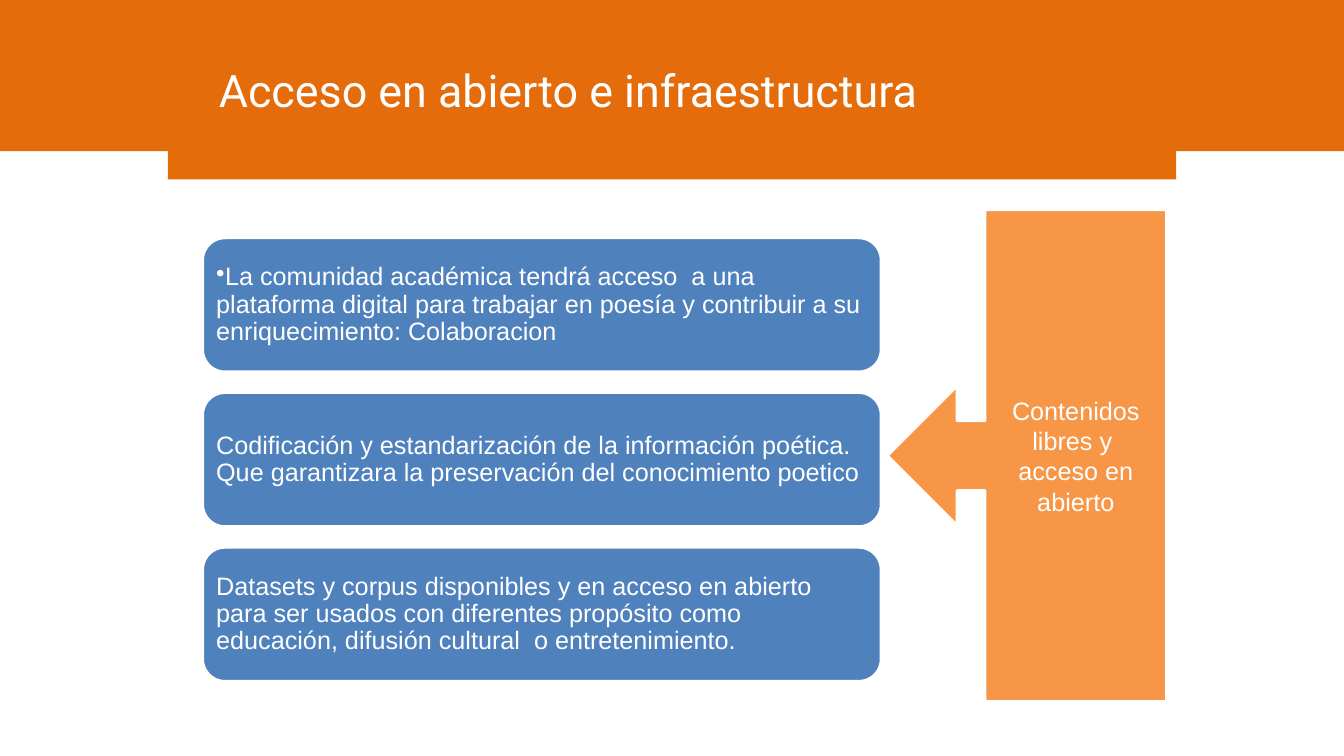
from pptx import Presentation
from pptx.dml.color import RGBColor
from pptx.enum.shapes import MSO_SHAPE
from pptx.enum.text import MSO_ANCHOR, PP_ALIGN
from pptx.oxml.ns import qn
from pptx.util import Inches, Pt
from lxml import etree

ORANGE, PEACH, BLUE, WHITE = "E46C0A", "F79646", "4F81BD", "FFFFFF"
WIDTH, HEIGHT = 13.33, 7.5

GOALS = [
    "La comunidad académica tendrá acceso  a una plataforma digital para "
    "trabajar en poesía y contribuir a su enriquecimiento: Colaboracion",
    "Codificación y estandarización de la información poética. "
    "Que garantizara la preservación del conocimiento poetico",
    "Datasets y corpus disponibles y en acceso en abierto para ser usados con "
    "diferentes propósito como educación, difusión cultural  o entretenimiento.",
]


def color(value):
    return RGBColor.from_string(value)


def add_block(slide, kind, box, fill, line=None):
    block = slide.shapes.add_shape(kind, *map(Inches, box))
    block.shadow.inherit = False
    block.fill.solid()
    block.fill.fore_color.rgb = color(fill)
    if line:
        block.line.color.rgb = color(line)
        block.line.width = Pt(2)
    else:
        block.line.fill.background()
    return block


def set_text(shape, text, font, size, align, spacing, inset):
    frame = shape.text_frame
    frame.text = text
    frame.word_wrap = True
    frame.vertical_anchor = MSO_ANCHOR.MIDDLE
    frame.margin_left = frame.margin_right = Inches(inset)
    frame.margin_top = frame.margin_bottom = Inches(inset)
    para = frame.paragraphs[0]
    para.alignment = align
    para.line_spacing = spacing
    run = para.runs[0].font
    run.name, run.size = font, Pt(size)
    run.color.rgb = color(WHITE)
    return para


def add_bullet(para):
    props = para._p.get_or_add_pPr()
    props.set("marL", "0")
    props.set("indent", "0")
    etree.SubElement(props, qn("a:buChar")).set("char", "•")


def add_header(slide, left, top, width, height):
    """Draw the full-width band, its lower tab and the title over both."""
    add_block(slide, MSO_SHAPE.RECTANGLE, (left, top, width, height), ORANGE)
    tab = 10
    add_block(slide, MSO_SHAPE.RECTANGLE,
              (left + (width - tab) / 2, top, tab, height + 0.28), ORANGE)
    title = slide.shapes.title
    title.left, title.top = Inches(left + 2.17), Inches(top + 0.3)
    title.width, title.height = Inches(8.08), Inches(1.25)
    set_text(title, "Acceso en abierto e infraestructura", "Roboto", 32,
             PP_ALIGN.LEFT, 0.9, 0)
    title.element.getparent().append(title.element)


def add_goals(slide, left, top, width, height):
    """Stack the goals evenly; only the first has a bullet."""
    tall = 1.33
    step = (height - tall) / (len(GOALS) - 1)
    for i, goal in enumerate(GOALS):
        card = add_block(slide, MSO_SHAPE.ROUNDED_RECTANGLE,
                         (left, top + i * step, width, tall), BLUE, WHITE)
        para = set_text(card, goal, "Arial", 18, PP_ALIGN.LEFT, 0.9, 0.07)
        if i == 0:
            add_bullet(para)


def add_source(slide, left, top, width, height):
    arrow = add_block(slide, MSO_SHAPE.LEFT_ARROW_CALLOUT,
                      (left, top, width, height), PEACH, WHITE)
    set_text(arrow, "Contenidos libres y  acceso en abierto", "Arial", 18,
             PP_ALIGN.CENTER, 1, 0.1)


def main():
    deck = Presentation()
    deck.slide_width, deck.slide_height = Inches(WIDTH), Inches(HEIGHT)
    slide = deck.slides.add_slide(deck.slide_layouts[5])
    add_header(slide, 0, 0, WIDTH, 1.5)
    add_goals(slide, 2.01, 2.36, 6.73, 4.4)
    add_source(slide, 8.8, 2.08, 2.77, 4.88)
    deck.save("out.pptx")


if __name__ == "__main__":
    main()
